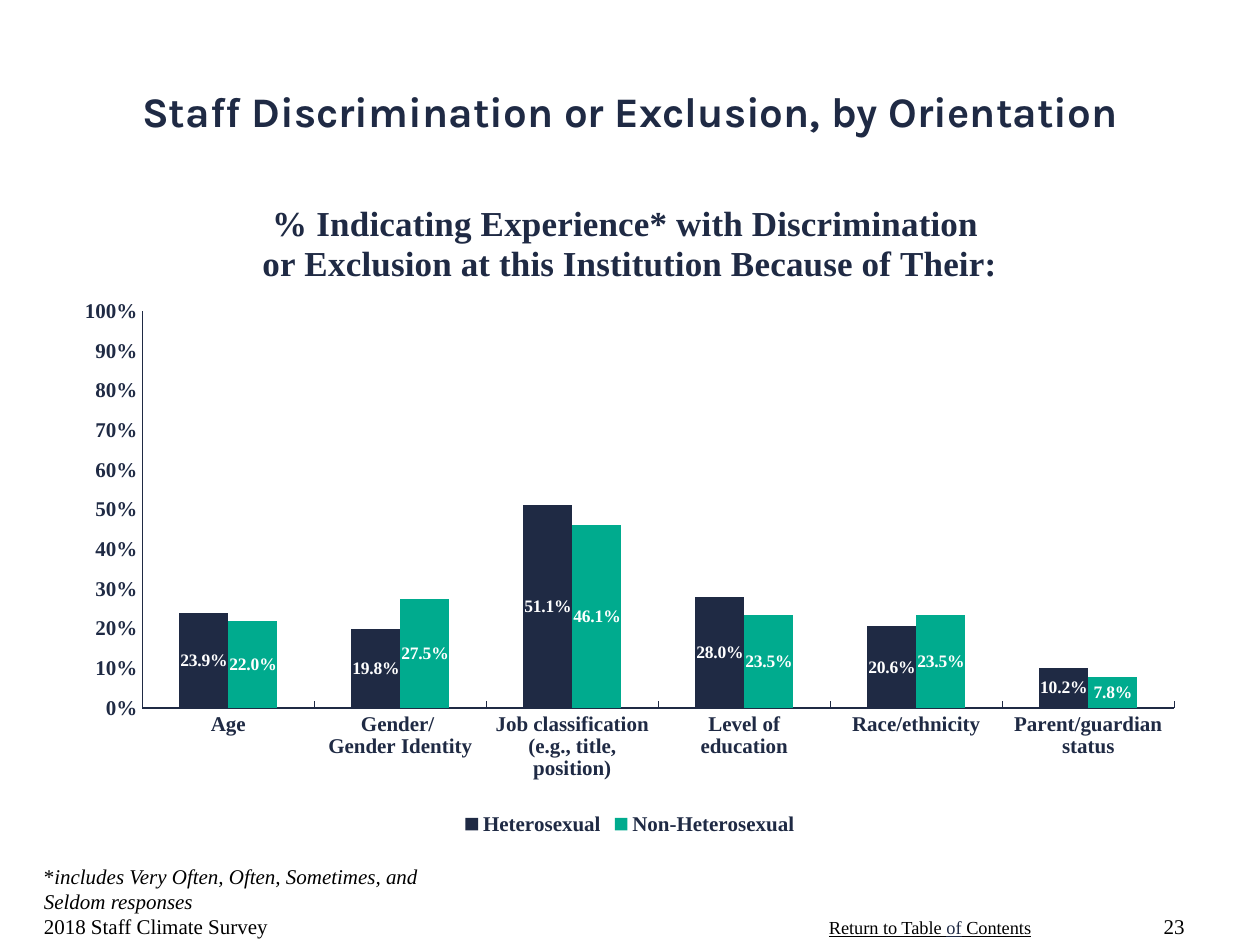
from lxml import etree
from pptx import Presentation
from pptx.chart.data import CategoryChartData
from pptx.dml.color import RGBColor
from pptx.enum.chart import (XL_CHART_TYPE, XL_LABEL_POSITION,
                             XL_LEGEND_POSITION, XL_TICK_MARK)
from pptx.enum.text import MSO_ANCHOR, PP_ALIGN
from pptx.oxml.ns import qn
from pptx.util import Inches, Pt

NAVY = RGBColor(0x1F, 0x2A, 0x44)
GREEN = RGBColor(0x00, 0xAB, 0x8E)
BLACK = RGBColor(0, 0, 0)
WHITE = RGBColor(255, 255, 255)
SERIF = "Times New Roman"
SANS = "Karla"

COLUMN = XL_CHART_TYPE.COLUMN_CLUSTERED
INNER = XL_LABEL_POSITION.CENTER
BELOW = XL_LEGEND_POSITION.BOTTOM
TICK_IN, TICK_NONE = XL_TICK_MARK.INSIDE, XL_TICK_MARK.NONE
TOP, MIDDLE, BOTTOM = MSO_ANCHOR.TOP, MSO_ANCHOR.MIDDLE, MSO_ANCHOR.BOTTOM
LEFT, CENTER, RIGHT = PP_ALIGN.LEFT, PP_ALIGN.CENTER, PP_ALIGN.RIGHT

GROUPS = ["Age", "Gender/ \nGender Identity",
          "Job classification (e.g., title, position)",
          "Level of education", "Race/ethnicity", "Parent/guardian status"]
SERIES = [
    ("Heterosexual", NAVY, (0.239, 0.198, 0.511, 0.28, 0.206, 0.102)),
    ("Non-Heterosexual", GREEN, (0.22, 0.275, 0.461, 0.235, 0.235, 0.078)),
]
HEADING = ["% Indicating Experience* with Discrimination ",
           "or Exclusion at this Institution Because of Their:"]
# Plot area inside the axes, as shares of the chart
PLOT = {"x": 0.07, "y": 0.2, "w": 0.91, "h": 0.6}


def style(font, size, color, name=SERIF, bold=False):
    font.size, font.name, font.bold = Pt(size), name, bold
    font.color.rgb = color


def add_text(slide, box, paras, size, align=LEFT, anchor=TOP,
             name=SERIF, bold=False, wrap=True):
    """Each paragraph is a list of (text, color, extras) runs."""
    shape = slide.shapes.add_textbox(*(Inches(v) for v in box))
    frame = shape.text_frame
    frame.word_wrap = wrap
    frame.vertical_anchor = anchor
    for i, runs in enumerate(paras):
        para = frame.paragraphs[0] if i == 0 else frame.add_paragraph()
        para.alignment = align
        for text, color, extras in runs:
            run = para.add_run()
            run.text = text
            style(run.font, size, color, name, bold)
            for key, value in extras.items():
                setattr(run.font, key, value)


def style_axis(axis, tick):
    axis.has_major_gridlines = False
    axis.major_tick_mark = tick
    axis.minor_tick_mark = TICK_NONE
    axis.format.line.color.rgb = NAVY
    axis.format.line.width = Pt(0.75)
    style(axis.tick_labels.font, 12, NAVY, bold=True)


def place_plot(chart):
    area = chart.plots[0]._element.getparent()
    for old in area.findall(qn("c:layout")):
        area.remove(old)
    layout = etree.Element(qn("c:layout"))
    area.insert(0, layout)
    manual = etree.SubElement(layout, qn("c:manualLayout"))
    marks = {"layoutTarget": "inner", "xMode": "edge", "yMode": "edge"}
    for tag, value in {**marks, **PLOT}.items():
        etree.SubElement(manual, qn("c:" + tag)).set("val", str(value))


def add_bars(slide):
    data = CategoryChartData(number_format="0.0%")
    data.categories = GROUPS
    for name, _, values in SERIES:
        data.add_series(name, values)
    chart = slide.shapes.add_chart(COLUMN, Inches(0.5), Inches(1.42),
                                   Inches(9), Inches(5.25), data).chart
    style(chart.font, 10, NAVY, bold=True)

    # Heading
    chart.has_title = True
    frame = chart.chart_title.text_frame
    for i, text in enumerate(HEADING):
        para = frame.paragraphs[0] if i == 0 else frame.add_paragraph()
        run = para.add_run()
        run.text = text
        style(run.font, 20, NAVY, bold=True)
    chart.chart_title.include_in_layout = False

    # Legend
    chart.has_legend = True
    chart.legend.position = BELOW
    chart.legend.include_in_layout = False
    style(chart.legend.font, 12, NAVY, bold=True)

    # Axes
    style_axis(chart.category_axis, TICK_IN)
    axis = chart.value_axis
    style_axis(axis, TICK_NONE)
    axis.minimum_scale, axis.maximum_scale, axis.major_unit = 0, 1, 0.1
    axis.tick_labels.number_format = "0%"
    axis.tick_labels.number_format_is_linked = False

    # Bars and their labels
    plot = chart.plots[0]
    plot.gap_width, plot.overlap = 150, 0
    plot.vary_by_categories = False
    for series, (_, color, _) in zip(plot.series, SERIES):
        series.format.fill.solid()
        series.format.fill.fore_color.rgb = color
        labels = series.data_labels
        labels.show_value = True
        labels.position = INNER
        labels.number_format = "0.0%"
        labels.number_format_is_linked = False
        style(labels.font, 10, WHITE, bold=True)
    place_plot(chart)


def main():
    deck = Presentation()
    deck.slide_width, deck.slide_height = Inches(10), Inches(7.5)
    slide = deck.slides.add_slide(deck.slide_layouts[6])

    # Title
    title = "Staff Discrimination or Exclusion, by Orientation"
    add_text(slide, (0, 0.25, 10, 1.25), [[(title, NAVY, {})]], 24,
             CENTER, MIDDLE, SANS, bold=True)

    add_bars(slide)

    # Footer: note, contents line, page number
    note = "includes Very Often, Often, Sometimes, and Seldom responses"
    add_text(slide, (0.25, 7, 3.17, 0.5),
             [[("*", BLACK, {}), (note, BLACK, {"italic": True})],
              [("2018 Staff Climate Survey", BLACK, {})]],
             12, anchor=BOTTOM)
    line = {"underline": True}
    add_text(slide, (6.48, 7.22, 1.82, 0.28),
             [[("Return to Table ", BLACK, line), ("of", NAVY, line),
               (" Contents", BLACK, line)]], 10.5, wrap=False)
    add_text(slide, (9, 7, 0.5, 0.5), [[("23", BLACK, {})]], 12,
             RIGHT, BOTTOM)

    deck.save("out.pptx")


if __name__ == "__main__":
    main()
